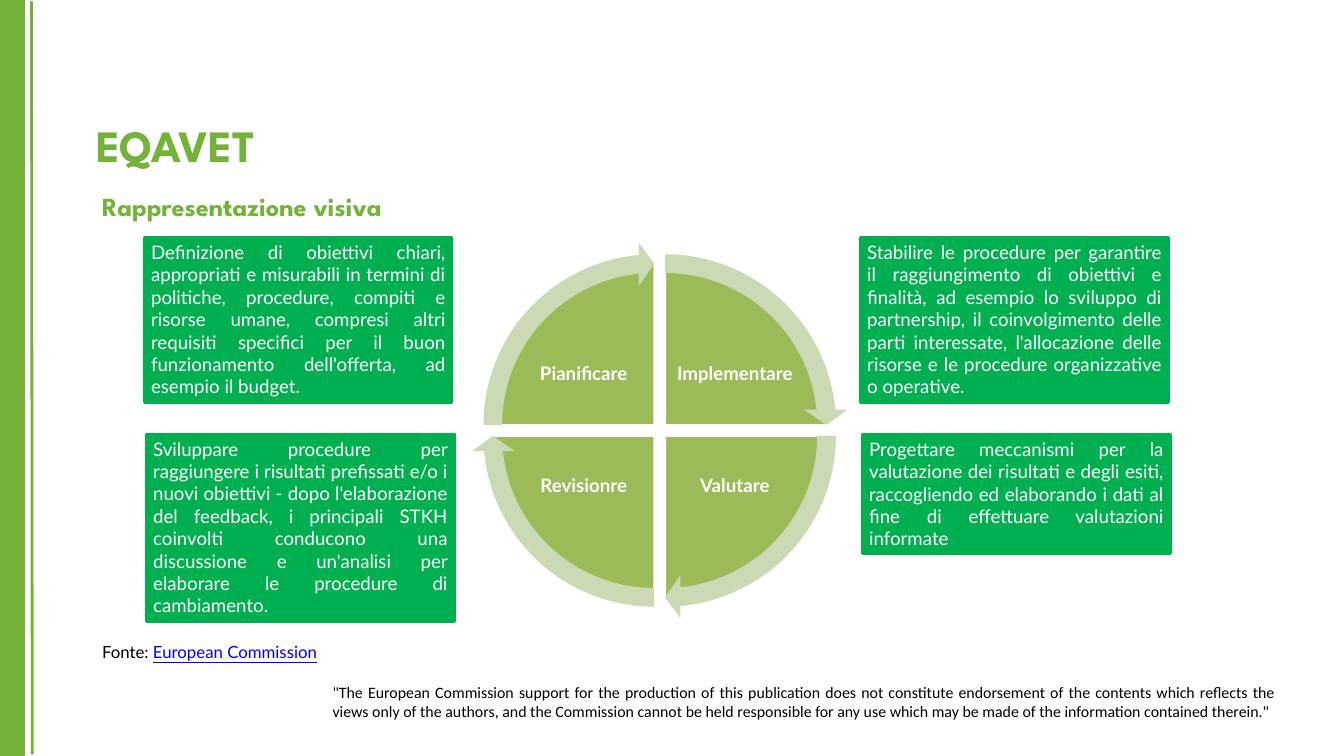
from lxml.etree import SubElement as Sub
from pptx import Presentation as Deck
from pptx.dml.color import RGBColor
from pptx.enum.shapes import MSO_CONNECTOR as Link, MSO_SHAPE as Shape
from pptx.enum.text import MSO_ANCHOR as Anchor, MSO_AUTO_SIZE as Fit, PP_ALIGN as Align
from pptx.oxml.ns import qn
from pptx.util import Cm, Pt

LEAF, LIME, PALE, GREEN = "74B138", "9BBB59", "CBDAB5", "00B050"
WHITE, BLACK, BLUE, TITLE = "FFFFFF", "000000", "0000FF", "75B239"

QUADS = [
    ("Implementare", 1, 0, 162),
    ("Valutare", 1, 1, 0),
    ("Revisionre", 0, 1, 54),
    ("Pianificare", 0, 0, 108),
]
CARDS = [
    (5.54, 16.41, 7.09, "Sviluppare procedure per raggiungere i risultati prefissati e/o i nuovi obiettivi - dopo l'elaborazione del feedback, i principali STKH coinvolti conducono una discussione e un'analisi per elaborare le procedure di cambiamento."),
    (5.46, 8.98, 6.25, "Definizione di obiettivi chiari, appropriati e misurabili in termini di politiche, procedure, compiti e risorse umane, compresi altri requisiti specifici per il buon funzionamento dell'offerta, ad esempio il budget."),
    (32.6, 16.42, 4.52, "Progettare meccanismi per la valutazione dei risultati e degli esiti, raccogliendo ed elaborando i dati al fine di effettuare valutazioni informate"),
    (32.53, 8.98, 6.25, "Stabilire le procedure per garantire il raggiungimento di obiettivi e finalità, ad esempio lo sviluppo di partnership, il coinvolgimento delle parti interessate, l'allocazione delle risorse e le procedure organizzative o operative."),
]
NOTICE = "\"The European Commission support for the production of this publication does not constitute endorsement of the contents which reflects the views only of the authors, and the Commission cannot be held responsible for any use which may be made of the information contained therein.\""


def color(text):
    return RGBColor.from_string(text)


class Page:
    """Draws styled elements on the current slide."""

    font = "Lato"

    def __init__(self, slide):
        self.slide = slide

    def shape(self, kind, box, fill, edge=None, width=0, turns=()):
        item = self.slide.shapes.add_shape(kind, *map(Cm, box))
        item.shadow.inherit = False
        item.fill.solid()
        item.fill.fore_color.rgb = color(fill)
        if edge:
            item.line.color.rgb = color(edge)
            item.line.width = Pt(width)
        else:
            item.line.fill.background()
        for index, turn in enumerate(turns):
            item.adjustments[index] = turn
        return item

    def line(self, ends, hue, width):
        item = self.slide.shapes.add_connector(Link.STRAIGHT, *map(Cm, ends))
        item.line.color.rgb = color(hue)
        item.line.width = Pt(width)
        Sub(item._element.spPr, qn("a:effectLst"))

    def put(self, frame, runs, size, align=Align.LEFT, font=None, bold=False):
        frame.word_wrap = True
        para = frame.paragraphs[0]
        para.alignment = align
        for text, hue, under in runs:
            run = para.add_run()
            run.text = text
            run.font.name = font or self.font
            run.font.size = Pt(size)
            run.font.bold = bold
            run.font.underline = under
            run.font.color.rgb = color(hue)
        return para

    def text(self, box, runs, size, **style):
        frame = self.slide.shapes.add_textbox(*map(Cm, box)).text_frame
        self.put(frame, runs, size, **style)
        frame.auto_size = Fit.SHAPE_TO_FIT_TEXT

    def label(self, box, text):
        frame = self.slide.shapes.add_textbox(*map(Cm, box)).text_frame
        frame.margin_left = frame.margin_right = Cm(0.08)
        frame.margin_top = frame.margin_bottom = Cm(0.08)
        frame.vertical_anchor = Anchor.MIDDLE
        para = self.put(frame, [(text, WHITE, False)], 20, Align.CENTER, bold=True)
        para.line_spacing = 0.9

    def card(self, left, top, height, text):
        item = self.shape(Shape.RECTANGLE, (left, top, 11.63, height), GREEN, GREEN, 3)
        frame = item.text_frame
        frame.vertical_anchor = Anchor.TOP
        self.put(frame, [(text, WHITE, False)], 20, Align.JUSTIFY)
        frame.auto_size = Fit.SHAPE_TO_FIT_TEXT

    def cycle(self, left, top, gap):
        for name, col, row, start in QUADS:
            box = left + col * gap, top + row * gap, 12.32, 12.32
            self.shape(Shape.PIE, box, LIME, WHITE, 2, (start, (start + 54) % 216))
            self.label((19.79 + col * 5.71, 12.45 + row * 4.26, 4.55, 3.38), name)
        for name, col, row, start in QUADS:
            box = left - 0.76 + col * gap, top - 0.76 + row * gap, 13.84, 13.84
            turns = 0.051, 3.275, start + 54 - 3.275, start, 0.059
            self.shape(Shape.CIRCULAR_ARROW, box, PALE, turns=turns)


def main():
    deck = Deck()
    deck.slide_width, deck.slide_height = Cm(50.8), Cm(28.58)
    page = Page(deck.slides.add_slide(deck.slide_layouts[6]))
    page.shape(Shape.RECTANGLE, (0, 0, 0.95, 28.58), LEAF)
    page.line((1.19, 0.05, 1.22, 28.52), LEAF, 3)
    page.text((12.32, 25.68, 36.14, 1.7), [(NOTICE, BLACK, False)], 17,
              align=Align.JUSTIFY, font="Calibri")
    page.text((3.38, 4.34, 46.56, 2.31), [("EQAVET", TITLE, False)], 48,
              font="League Spartan", bold=True)
    page.text((3.61, 7.09, 27.89, 1.45), [("Rappresentazione visiva", TITLE, False)], 28,
              font="League Spartan", bold=True)
    page.cycle(18.57, 9.91, 0.41)
    for card in CARDS:
        page.card(*card)
    page.text((3.61, 24.13, 16.76, 1.02),
              [("Fonte: ", BLACK, False), ("European Commission", BLUE, True)], 18)
    deck.save("out.pptx")


if __name__ == "__main__":
    main()
